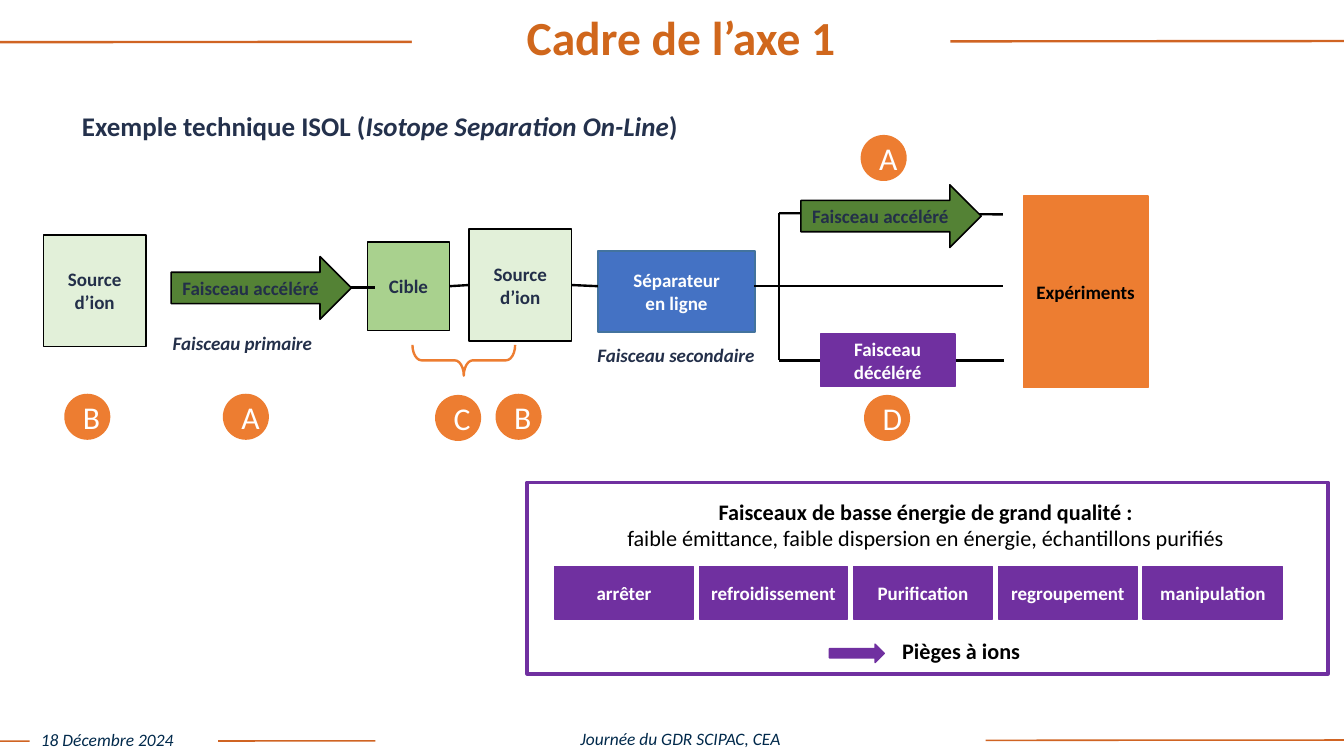
import pptx
import pptx.util
import pptx.dml.color
import pptx.enum.shapes
import pptx.enum.text
import pptx.oxml

RGBColor = pptx.dml.color.RGBColor
Inches = pptx.util.Inches
Pt = pptx.util.Pt
Shape = pptx.enum.shapes.MSO_SHAPE
Align = pptx.enum.text.PP_ALIGN
Anchor = pptx.enum.text.MSO_ANCHOR

WHITE = RGBColor(0xFF, 0xFF, 0xFF)
BLACK = RGBColor(0x00, 0x00, 0x00)
RULE = RGBColor(0xD0, 0x64, 0x23)
TITLE = RGBColor(0xD0, 0x67, 0x1C)
FOOTER = RGBColor(0x00, 0x29, 0x4B)
HEADING = RGBColor(0x24, 0x31, 0x4C)
INK = RGBColor(0x23, 0x2F, 0x49)
ORANGE = RGBColor(0xED, 0x7D, 0x31)
PURPLE = RGBColor(0x70, 0x30, 0xA0)
BLUE = RGBColor(0x44, 0x72, 0xC4)
BLUE_EDGE = RGBColor(0x43, 0x73, 0x9E)
DARK_GREEN = RGBColor(0x54, 0x82, 0x35)
GREEN = RGBColor(0xA9, 0xD1, 0x8E)
PALE_GREEN = RGBColor(0xE2, 0xF0, 0xD9)

AXIS_Y = 2.51
BRANCH_X = 6.83
DECEL_Y = 3.16


class BeamSlide:
    font = "Calibri"

    def __init__(self, deck):
        self.slide = deck.slides.add_slide(deck.slide_layouts[6])

    def fill_text(self, shape, paragraphs, size, color, bold=False, italic=False,
                  align=Align.CENTER, anchor=Anchor.MIDDLE, spacing=None, wrap=True):
        frame = shape.text_frame
        frame.word_wrap = wrap
        frame.vertical_anchor = anchor
        for index, content in enumerate(paragraphs):
            paragraph = frame.paragraphs[0] if index == 0 else frame.add_paragraph()
            paragraph.alignment = align
            paragraph.line_spacing = spacing
            pieces = [(content, {})] if isinstance(content, str) else content
            for piece, changes in pieces:
                for number, line in enumerate(piece.split("\n")):
                    if number:
                        paragraph.add_line_break()
                    run = paragraph.add_run()
                    run.text = line
                    run.font.color.rgb = color
                    formats = {"name": self.font, "size": Pt(size),
                               "bold": bold, "italic": italic} | changes
                    for name, value in formats.items():
                        setattr(run.font, name, value)

    def shape(self, kind, box, fill=None, line=None, width=1, adjust=(), rotation=0):
        shape = self.slide.shapes.add_shape(kind, *map(Inches, box))
        shape.shadow.inherit = False
        shape.rotation = rotation
        for index, value in enumerate(adjust):
            shape.adjustments[index] = value
        for part, color in ((shape.fill, fill), (shape.line.fill, line)):
            if color is None:
                part.background()
            else:
                part.solid()
                part.fore_color.rgb = color
        if line is not None:
            shape.line.width = Pt(width)
        return shape

    def block(self, label, box, fill, line, color, size=12, bold=True, **style):
        block = self.shape(Shape.RECTANGLE, box, fill, line)
        self.fill_text(block, [label], size, color, bold=bold, **style)
        return block

    def text(self, paragraphs, box, size, color, **style):
        label = self.slide.shapes.add_textbox(*map(Inches, box))
        self.fill_text(label, paragraphs, size, color, **style)

    def beam_arrow(self, left, top):
        arrow = self.shape(Shape.RIGHT_ARROW, (left, top, 1.58, 0.55), DARK_GREEN, BLACK)
        self.fill_text(arrow, ["Faisceau accéléré"], 12, INK, bold=True, align=Align.LEFT)

    def badge(self, letter, left, top):
        badge = self.shape(Shape.OVAL, (left, top, 0.39, 0.39), ORANGE, ORANGE)
        self.fill_text(badge, [letter], 20, WHITE)

    def line(self, start, end, color=BLACK, width=1.5, source=None, target=None):
        line = self.slide.shapes.add_connector(
            pptx.enum.shapes.MSO_CONNECTOR.STRAIGHT, *map(Inches, (*start, *end)))
        line.line.color.rgb = color
        line.line.width = Pt(width)
        properties = line._element.spPr
        properties.append(pptx.oxml.parse_xml(
            '<a:effectLst xmlns:a="http://schemas.openxmlformats.org/drawingml/2006/main"/>'))
        if source is not None:
            line.begin_connect(source, 3)
        if target is not None:
            line.end_connect(target, 1)


def main():
    deck = pptx.Presentation()
    deck.slide_width = Inches(11.78)
    deck.slide_height = Inches(6.63)
    page = BeamSlide(deck)

    page.line((11.78, 6.49), (0, 6.5), RULE, 1)
    page.line((11.78, 0.36), (0, 0.37), RULE)
    page.block("18 Décembre 2024", (0.26, 6.34, 1.65, 0.29), WHITE, None, FOOTER,
               size=11, bold=False, italic=True, align=Align.LEFT)
    page.block("Journée du GDR SCIPAC, CEA", (3.29, 6.34, 5.35, 0.28), WHITE, None, FOOTER,
               size=11, bold=False, italic=True)
    page.block("Cadre de l’axe 1", (3.61, 0, 4.72, 0.71), WHITE, None, TITLE,
               size=30, spacing=0.9)
    page.text([[("Exemple technique ISOL (", {}),
                ("Isotope Separation On-Line", {"italic": True}), (")", {})]],
              (0.62, 0.97, 5.99, 0.43), 17, HEADING, bold=True,
              align=Align.LEFT, anchor=Anchor.TOP, spacing=0.8)

    page.block("Source d’ion", (0.38, 2.06, 0.9, 0.98), PALE_GREEN, BLACK, INK)
    target = page.block("Cible", (3.22, 2.12, 0.72, 0.78), GREEN, BLACK, INK)
    ion_source = page.block("Source d’ion", (4.11, 2.01, 0.9, 0.98), PALE_GREEN, BLACK, INK)
    page.block("Séparateur\nen ligne", (5.24, 2.2, 1.38, 0.71), BLUE, BLUE_EDGE, WHITE)

    page.line((2.58, 2.52), (3.29, 2.52))
    page.line((3.94, AXIS_Y), (4.11, AXIS_Y), source=target, target=ion_source)
    page.line((5.01, AXIS_Y), (5.24, AXIS_Y), source=ion_source)
    page.line((6.61, AXIS_Y), (8.79, AXIS_Y))
    page.line((BRANCH_X, 1.87), (BRANCH_X, DECEL_Y))
    page.line((BRANCH_X, 1.87), (8.79, 1.88))
    page.line((8.8, DECEL_Y), (BRANCH_X, DECEL_Y))

    for left, top in ((1.5, 2.25), (7.02, 1.62)):
        page.beam_arrow(left, top)
    page.block("Faisceau décéléré", (7.19, 2.93, 1.18, 0.46), PURPLE, PURPLE, WHITE)
    page.block("Expériments", (8.97, 1.72, 1.09, 1.68), ORANGE, ORANGE, BLACK)
    for caption, box in (("Faisceau primaire", (1.4, 2.86, 1.45, 0.3)),
                         ("Faisceau secondaire", (5.12, 2.96, 1.61, 0.3))):
        page.text([caption], box, 12, INK, bold=True, italic=True,
                  anchor=Anchor.TOP, wrap=False)

    page.shape(Shape.RIGHT_BRACE, (3.93, 2.71, 0.27, 0.9), line=ORANGE, width=1.5,
               adjust=(0.293, 0.5), rotation=90)
    for letter, left, top in (("B", 0.57, 3.46), ("A", 1.96, 3.46), ("C", 3.82, 3.47),
                              ("B", 4.35, 3.46), ("D", 7.58, 3.47), ("A", 7.55, 1.19)):
        page.badge(letter, left, top)

    page.shape(Shape.RECTANGLE, (4.62, 4.23, 7.02, 1.68), line=PURPLE, width=2.25)
    page.text([[("Faisceaux de basse énergie de grand qualité :", {"bold": True})],
               "faible émittance, faible dispersion en énergie, échantillons purifiés"],
              (5.19, 4.32, 5.85, 0.57), 14, BLACK, anchor=Anchor.TOP)
    step_left = 4.86
    for step, width in (("arrêter", 1.22), ("refroidissement", 1.3), ("Purification", 1.22),
                        ("regroupement", 1.22), ("manipulation", 1.22)):
        page.block(step, (step_left, 4.97, width, 0.46), PURPLE, PURPLE, WHITE)
        step_left += width + 0.05
    page.shape(Shape.RIGHT_ARROW, (7.27, 5.65, 0.48, 0.16), PURPLE, PURPLE)
    page.text(["Pièges à ions"], (7.7, 5.54, 1.45, 0.34), 14, BLACK,
              bold=True, anchor=Anchor.TOP)

    deck.save("out.pptx")


if __name__ == "__main__":
    main()
